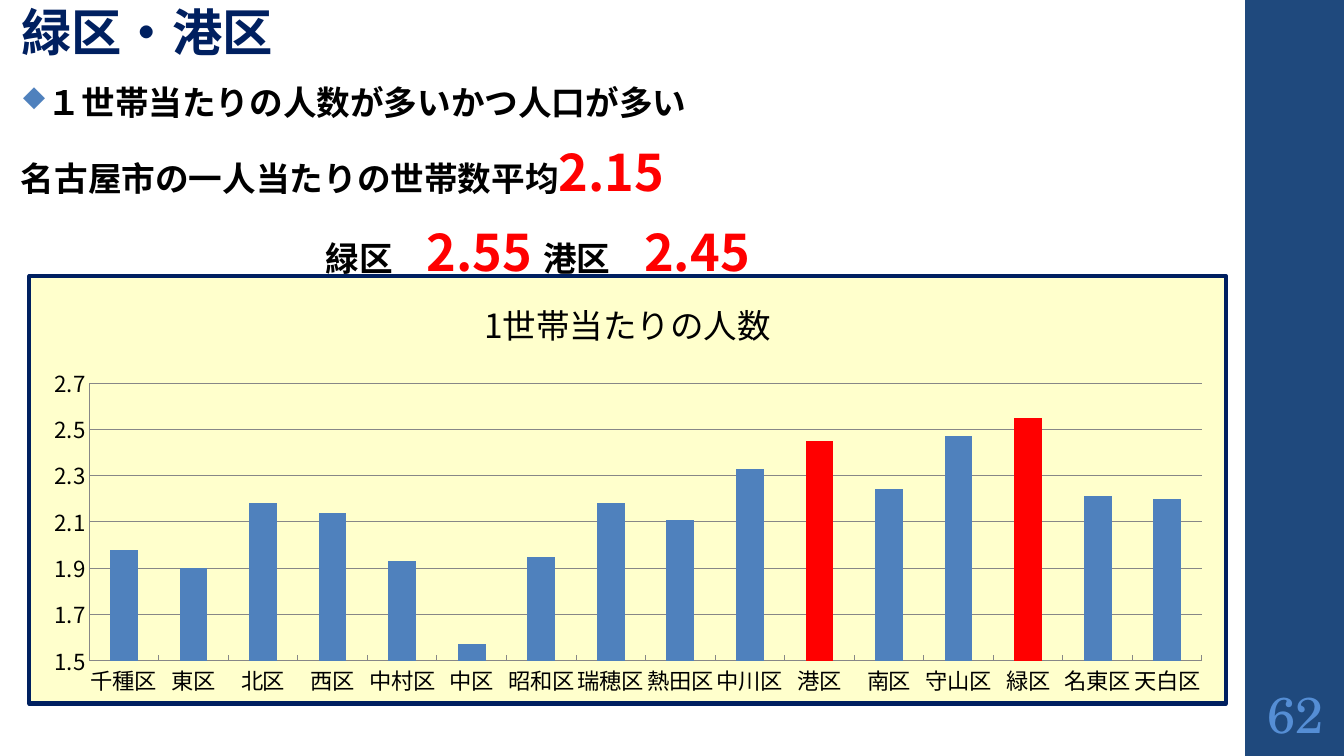
import pptx
import pptx.chart.data
import pptx.dml.color
import pptx.enum.chart
import pptx.enum.shapes
import pptx.enum.text
import pptx.oxml
import pptx.oxml.ns
import pptx.util
from pptx.util import Inches

SANS = "Noto Sans CJK JP"
SERIF = "TeX Gyre Schola"
NAVY, BLUE, RED, BLACK = "002060", "4F81BD", "FF0000", "000000"
GRID = "878787"
HOUSEHOLD_SIZES = {
    "千種区": 1.98, "東区": 1.9, "北区": 2.18, "西区": 2.14,
    "中村区": 1.93, "中区": 1.57, "昭和区": 1.95, "瑞穂区": 2.18,
    "熱田区": 2.11, "中川区": 2.33, "港区": 2.45, "南区": 2.24,
    "守山区": 2.47, "緑区": 2.55, "名東区": 2.21, "天白区": 2.2,
}
HIGHLIGHTED = ("港区", "緑区")


def color(value):
    return pptx.dml.color.RGBColor.from_string(value)


def xml(tag, content="", attributes=""):
    namespaces = pptx.oxml.ns.nsdecls("a", "c")
    return pptx.oxml.parse_xml(f"<{tag} {namespaces} {attributes}>{content}</{tag}>")


def style_font(font, size, fill, name=SANS, bold=False):
    font.size = pptx.util.Pt(size)
    font.bold = bold
    font.color.rgb = color(fill)
    font.name = name
    latin = font._element.find(pptx.oxml.ns.qn("a:latin"))
    latin.addnext(xml("a:ea", attributes=f'typeface="{name}"'))


def add_run(paragraph, text, size, fill, name=SANS, bold=True):
    run = paragraph.add_run()
    run.text = text
    style_font(run.font, size, fill, name, bold)


def prepare_frame(shape, anchor):
    frame = shape.text_frame
    frame.word_wrap = True
    frame.auto_size = pptx.enum.text.MSO_AUTO_SIZE.NONE
    frame.vertical_anchor = anchor
    frame.margin_left = frame.margin_right = Inches(0.1)
    frame.margin_top = frame.margin_bottom = 0
    return frame


def space_lines(paragraph):
    paragraph.alignment = pptx.enum.text.PP_ALIGN.LEFT
    paragraph.line_spacing = pptx.util.Pt(41)
    paragraph.space_before = pptx.util.Pt(0)
    paragraph.space_after = pptx.util.Pt(16)


def indent(paragraph, left, first=0):
    properties = paragraph._p.get_or_add_pPr()
    properties.set("marL", str(left))
    properties.set("indent", str(first))
    return properties


def add_bullet(paragraph):
    properties = indent(paragraph, Inches(0.2), Inches(-0.2))
    properties.append(xml("a:buClr", f'<a:srgbClr val="{BLUE}"/>'))
    properties.append(xml("a:buSzPct", attributes='val="80000"'))
    properties.append(xml("a:buFont", attributes='typeface="Wingdings" charset="2"'))
    properties.append(xml("a:buChar", attributes='char="u"'))


def set_title(slide):
    title = slide.shapes.title
    title.left, title.top = Inches(0.11), Inches(0.04)
    title.width, title.height = Inches(12.1), Inches(0.6)
    frame = prepare_frame(title, pptx.enum.text.MSO_ANCHOR.TOP)
    paragraph = frame.paragraphs[0]
    space_lines(paragraph)
    add_run(paragraph, "緑区・港区", 36, NAVY)


def add_statements(slide):
    box = slide.shapes.add_textbox(Inches(0.11), Inches(0.64), Inches(12.1), Inches(2.05))
    frame = prepare_frame(box, pptx.enum.text.MSO_ANCHOR.TOP)
    summary = frame.paragraphs[0]
    average = frame.add_paragraph()
    wards = frame.add_paragraph()
    for paragraph in frame.paragraphs:
        space_lines(paragraph)
    add_bullet(summary)
    indent(wards, Inches(3.02))
    add_run(summary, "１世帯当たりの人数が多いかつ人口が多い", 24, BLACK)
    add_run(average, "名古屋市の一人当たりの世帯数平均", 24, BLACK)
    add_run(average, "2.15", 36, RED)
    add_run(wards, "緑区　", 24, BLACK)
    add_run(wards, "2.55 ", 36, RED)
    add_run(wards, "港区　", 24, BLACK)
    add_run(wards, "2.45", 36, RED)


def add_sidebar(slide):
    band = slide.shapes.add_shape(
        pptx.enum.shapes.MSO_SHAPE.RECTANGLE, Inches(12.35), 0, Inches(0.98), Inches(7.5))
    band.shadow.inherit = False
    band.fill.solid()
    band.fill.fore_color.rgb = color("1F497D")
    band.line.fill.background()
    box = slide.shapes.add_textbox(Inches(12.35), Inches(6.75), Inches(1), Inches(0.65))
    frame = prepare_frame(box, pptx.enum.text.MSO_ANCHOR.MIDDLE)
    paragraph = frame.paragraphs[0]
    paragraph.alignment = pptx.enum.text.PP_ALIGN.CENTER
    add_run(paragraph, "62", 36, "558ED5", SERIF, bold=False)


def style_axis(axis):
    axis.major_tick_mark = pptx.enum.chart.XL_TICK_MARK.INSIDE
    axis.minor_tick_mark = pptx.enum.chart.XL_TICK_MARK.NONE
    axis.format.line.color.rgb = color(GRID)


def set_plot_layout(chart, x, y, width, height):
    plot_area = chart._chartSpace.chart.plotArea
    for layout in plot_area.findall(pptx.oxml.ns.qn("c:layout")):
        plot_area.remove(layout)
    values = {"layoutTarget": "inner", "xMode": "edge", "yMode": "edge",
              "x": x, "y": y, "w": width, "h": height}
    content = "".join(f'<c:{key} val="{value}"/>' for key, value in values.items())
    plot_area.insert(0, xml("c:layout", f"<c:manualLayout>{content}</c:manualLayout>"))


def frame_chart(chart):
    fill = '<a:solidFill><a:srgbClr val="{}"/></a:solidFill>'
    line = f'<a:ln w="{pptx.util.Pt(3)}">{fill.format(NAVY)}</a:ln>'
    properties = xml("c:spPr", fill.format("FFFFCC") + line)
    chart._chartSpace.chart.addnext(properties)


def add_household_chart(slide):
    data = pptx.chart.data.CategoryChartData()
    data.categories = list(HOUSEHOLD_SIZES)
    data.add_series("1世帯当たりの人数", list(HOUSEHOLD_SIZES.values()))
    chart = slide.shapes.add_chart(
        pptx.enum.chart.XL_CHART_TYPE.COLUMN_CLUSTERED,
        Inches(0.27), Inches(2.72), Inches(11.91), Inches(4.28), data).chart
    style_font(chart.font, 16, BLACK)
    chart.has_legend = False
    chart.has_title = True
    add_run(chart.chart_title.text_frame.paragraphs[0], "1世帯当たりの人数", 24, BLACK, bold=False)
    chart.chart_title.include_in_layout = False
    style_axis(chart.category_axis)
    values = chart.value_axis
    style_axis(values)
    values.minimum_scale, values.maximum_scale, values.major_unit = 1.5, 2.7, 0.2
    values.tick_labels.number_format = "0.0"
    values.tick_labels.number_format_is_linked = False
    values.has_major_gridlines = True
    values.major_gridlines.format.line.color.rgb = color(GRID)
    plot = chart.plots[0]
    plot.gap_width = 150
    plot.vary_by_categories = False
    series = plot.series[0]
    series.format.fill.solid()
    series.format.fill.fore_color.rgb = color(BLUE)
    for index, ward in enumerate(HOUSEHOLD_SIZES):
        if ward in HIGHLIGHTED:
            fill = series.points[index].format.fill
            fill.solid()
            fill.fore_color.rgb = color(RED)
    set_plot_layout(chart, 0.05, 0.25, 0.93, 0.65)
    frame_chart(chart)


def main():
    presentation = pptx.Presentation()
    presentation.slide_width = Inches(13.33)
    presentation.slide_height = Inches(7.5)
    slide = presentation.slides.add_slide(presentation.slide_layouts[5])
    add_sidebar(slide)
    set_title(slide)
    add_statements(slide)
    add_household_chart(slide)
    presentation.save("out.pptx")


if __name__ == "__main__":
    main()
